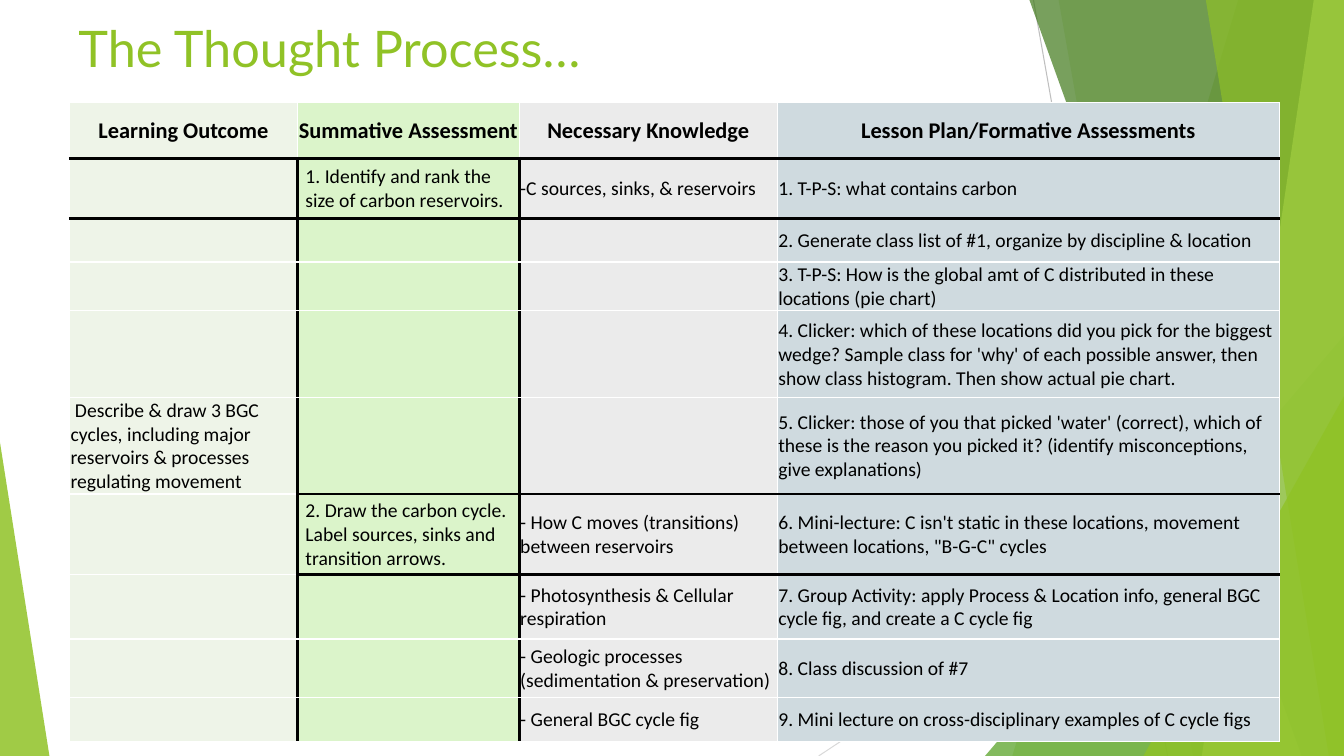
from dataclasses import dataclass

from lxml.etree import SubElement
from pptx import Presentation
from pptx.dml.color import RGBColor
from pptx.enum.shapes import MSO_CONNECTOR as Connector, MSO_SHAPE as Preset
from pptx.enum.text import MSO_ANCHOR as Anchor, PP_ALIGN as Align
from pptx.oxml.ns import qn
from pptx.shapes.autoshape import Shape
from pptx.slide import Slide
from pptx.table import _Cell as Cell
from pptx.util import Inches, Pt

SLIDE_WIDTH, SLIDE_HEIGHT = 13.33, 7.5


@dataclass(frozen=True)
class Theme:
    lime: str = "90C226"
    green: str = "54A021"
    forest: str = "3F7819"
    pale_lime: str = "C0E474"
    ink: str = "000000"
    grid: str = "FFFFFF"
    title_font: str = "Lato"
    table_font: str = "Calibri"
    title_size: float = 36
    header_size: float = 16
    body_size: float = 14
    heavy_rule: float = 2.25
    light_rule: float = 1
    hairline: float = 0.75


THEME = Theme()


@dataclass(frozen=True)
class Hairline:
    start: tuple[float, float]
    end: tuple[float, float]
    color: str


@dataclass(frozen=True)
class Band:
    """Area from a slanted left edge to the right side of the slide."""
    top_x: float
    bottom_x: float
    color: str
    opacity: int


@dataclass(frozen=True)
class Wedge:
    """Right triangle standing on the bottom of the slide."""
    left: float
    top: float
    width: float
    apex: float
    color: str
    opacity: int


@dataclass(frozen=True)
class Column:
    heading: str
    width: float
    fill: str
    indent: float = 0


@dataclass(frozen=True)
class Row:
    height: float
    texts: tuple[str, str, str, str]
    ruled_from: int | None = None  # first column with a heavy rule below


HAIRLINES = [
    Hairline((10.25, 0), (11.58, 7.5), "BFBFBF"),
    Hairline((13.33, 4.03), (8.12, 7.5), "D9D9D9"),
]
FACETS = [
    Band(12.28, 10.04, THEME.lime, 30),
    Band(10.5, 11.83, THEME.lime, 20),
    Wedge(9.77, 3.33, 3.56, 1, THEME.green, 72),
    Band(10.21, 12.91, THEME.forest, 70),
    Band(13.03, 11.92, THEME.pale_lime, 70),
    Band(11.96, 13.18, THEME.lime, 65),
    Wedge(11.34, 3.93, 1.99, 1, THEME.lime, 80),
    Wedge(0, 4.39, 0.49, 0, THEME.lime, 85),
]
COLUMNS = [
    Column("Learning Outcome", 2.26, "EEF4E8"),
    Column("Summative Assessment", 2.2, "DBF4CA", indent=0.07),
    Column("Necessary Knowledge", 2.56, "EBEBEB"),
    Column("Lesson Plan/Formative Assessments", 4.98, "CFDADF"),
]
HEAVY_SIDE_COLUMNS = (1, 2)
ROWS = [
    Row(0.55, tuple(column.heading for column in COLUMNS), 0),
    Row(0.6, ("", "1. Identify and rank the size of carbon reservoirs.",
              "-C sources, sinks, & reservoirs", "1. T-P-S: what contains carbon"), 0),
    Row(0.43, ("", "", "", "2. Generate class list of #1, organize by discipline & location")),
    Row(0.43, ("", "", "", "3. T-P-S: How is the global amt of C distributed in these "
                           "locations (pie chart)")),
    Row(0.86, ("", "", "", "4. Clicker: which of these locations did you pick for the biggest "
                           "wedge? Sample class for 'why' of each possible answer, then show "
                           "class histogram. Then show actual pie chart.")),
    Row(0.87, (" Describe & draw 3 BGC cycles, including major reservoirs & processes "
               "regulating movement", "", "",
               "5. Clicker: those of you that picked 'water' (correct), which of these is the "
               "reason you picked it? (identify misconceptions, give explanations)"), 1),
    Row(0.8, ("", "2. Draw the carbon cycle. Label sources, sinks and transition arrows.",
              "- How C moves (transitions) between reservoirs",
              "6. Mini-lecture: C isn't static in these locations, movement between "
              "locations, \"B-G-C\" cycles"), 1),
    Row(0.64, ("", "", "- Photosynthesis & Cellular respiration",
               "7. Group Activity: apply Process & Location info, general BGC cycle fig, "
               "and create a C cycle fig")),
    Row(0.58, ("", "", "- Geologic processes (sedimentation & preservation)",
               "8. Class discussion of #7")),
    Row(0.44, ("", "", "- General BGC cycle fig",
               "9. Mini lecture on cross-disciplinary examples of C cycle figs")),
]


def rgb(color: str) -> RGBColor:
    return RGBColor.from_string(color)


def paint(shape: Shape, color: str, opacity: int) -> None:
    shape.shadow.inherit = False
    shape.line.fill.background()
    shape.fill.solid()
    shape.fill.fore_color.rgb = rgb(color)
    tint = shape.fill._xPr.find(".//" + qn("a:srgbClr"))
    SubElement(tint, qn("a:alpha"), val=str(opacity * 1000))


def draw_hairline(page: Slide, hairline: Hairline) -> None:
    ends = [Inches(value) for value in hairline.start + hairline.end]
    line = page.shapes.add_connector(Connector.STRAIGHT, *ends)
    line.line.color.rgb = rgb(hairline.color)
    line.line.width = Pt(THEME.hairline)
    SubElement(line._element.spPr, qn("a:effectLst"))


def draw_band(page: Slide, band: Band) -> None:
    corners = [(band.top_x, 0), (SLIDE_WIDTH, 0),
               (SLIDE_WIDTH, SLIDE_HEIGHT), (band.bottom_x, SLIDE_HEIGHT)]
    points = [(Inches(x), Inches(y)) for x, y in corners]
    outline = page.shapes.build_freeform(*points[0])
    outline.add_line_segments(points[1:], close=True)
    paint(outline.convert_to_shape(), band.color, band.opacity)


def draw_wedge(page: Slide, wedge: Wedge) -> None:
    triangle = page.shapes.add_shape(
        Preset.ISOSCELES_TRIANGLE, Inches(wedge.left), Inches(wedge.top),
        Inches(wedge.width), Inches(SLIDE_HEIGHT - wedge.top))
    triangle.adjustments[0] = wedge.apex
    paint(triangle, wedge.color, wedge.opacity)


def rule_below(row: int, column: int) -> bool:
    """Tell whether the edge under a cell is heavy."""
    if row < 0:
        return False
    first = ROWS[row].ruled_from
    return first is not None and column >= first


def set_borders(cell: Cell, row: int, column: int) -> None:
    heavy_edges = {
        "a:lnL": row > 0 and column in HEAVY_SIDE_COLUMNS,
        "a:lnR": row > 0 and column + 1 in HEAVY_SIDE_COLUMNS,
        "a:lnT": rule_below(row - 1, column),
        "a:lnB": rule_below(row, column),
    }
    properties = cell._tc.get_or_add_tcPr()
    for tag, heavy in heavy_edges.items():
        width = Pt(THEME.heavy_rule if heavy else THEME.light_rule)
        edge = SubElement(properties, qn(tag), w=str(width))
        fill = SubElement(edge, qn("a:solidFill"))
        SubElement(fill, qn("a:srgbClr"), val=THEME.ink if heavy else THEME.grid)


def fill_cell(cell: Cell, row: int, column: int) -> None:
    set_borders(cell, row, column)
    cell.fill.solid()
    cell.fill.fore_color.rgb = rgb(COLUMNS[column].fill)
    cell.vertical_anchor = Anchor.MIDDLE
    cell.margin_left = cell.margin_right = cell.margin_top = Inches(0.01)
    cell.margin_bottom = 0
    text = ROWS[row].texts[column]
    if not text:
        return
    is_header = row == 0
    para = cell.text_frame.paragraphs[0]
    para.alignment = Align.CENTER if is_header else Align.LEFT
    if not is_header and COLUMNS[column].indent:
        para._p.get_or_add_pPr().set("marL", str(Inches(COLUMNS[column].indent)))
    span = para.add_run()
    span.text = text
    span.font.name = THEME.table_font
    span.font.size = Pt(THEME.header_size if is_header else THEME.body_size)
    span.font.bold = is_header
    span.font.color.rgb = rgb(THEME.ink)


def draw_plan_table(page: Slide) -> None:
    width = sum(column.width for column in COLUMNS)
    height = sum(row.height for row in ROWS)
    table = page.shapes.add_table(len(ROWS), len(COLUMNS), Inches(0.69), Inches(1.02),
                                  Inches(width), Inches(height)).table
    table.first_row = table.horz_banding = False
    for index, column in enumerate(COLUMNS):
        table.columns[index].width = Inches(column.width)
    for row_index, row in enumerate(ROWS):
        table.rows[row_index].height = Inches(row.height)
        for column_index in range(len(COLUMNS)):
            fill_cell(table.cell(row_index, column_index), row_index, column_index)


def draw_title(page: Slide) -> None:
    box = page.shapes.add_textbox(Inches(0.68), Inches(0.12), Inches(9.4), Inches(1.44))
    box.text_frame.word_wrap = True
    span = box.text_frame.paragraphs[0].add_run()
    span.text = "The Thought Process…"
    span.font.name = THEME.title_font
    span.font.size = Pt(THEME.title_size)
    span.font.color.rgb = rgb(THEME.lime)


def main() -> None:
    deck = Presentation()
    deck.slide_width, deck.slide_height = Inches(SLIDE_WIDTH), Inches(SLIDE_HEIGHT)
    page = deck.slides.add_slide(deck.slide_layouts[6])
    for hairline in HAIRLINES:
        draw_hairline(page, hairline)
    for facet in FACETS:
        if isinstance(facet, Band):
            draw_band(page, facet)
        else:
            draw_wedge(page, facet)
    draw_plan_table(page)
    draw_title(page)
    deck.save("out.pptx")


if __name__ == "__main__":
    main()
